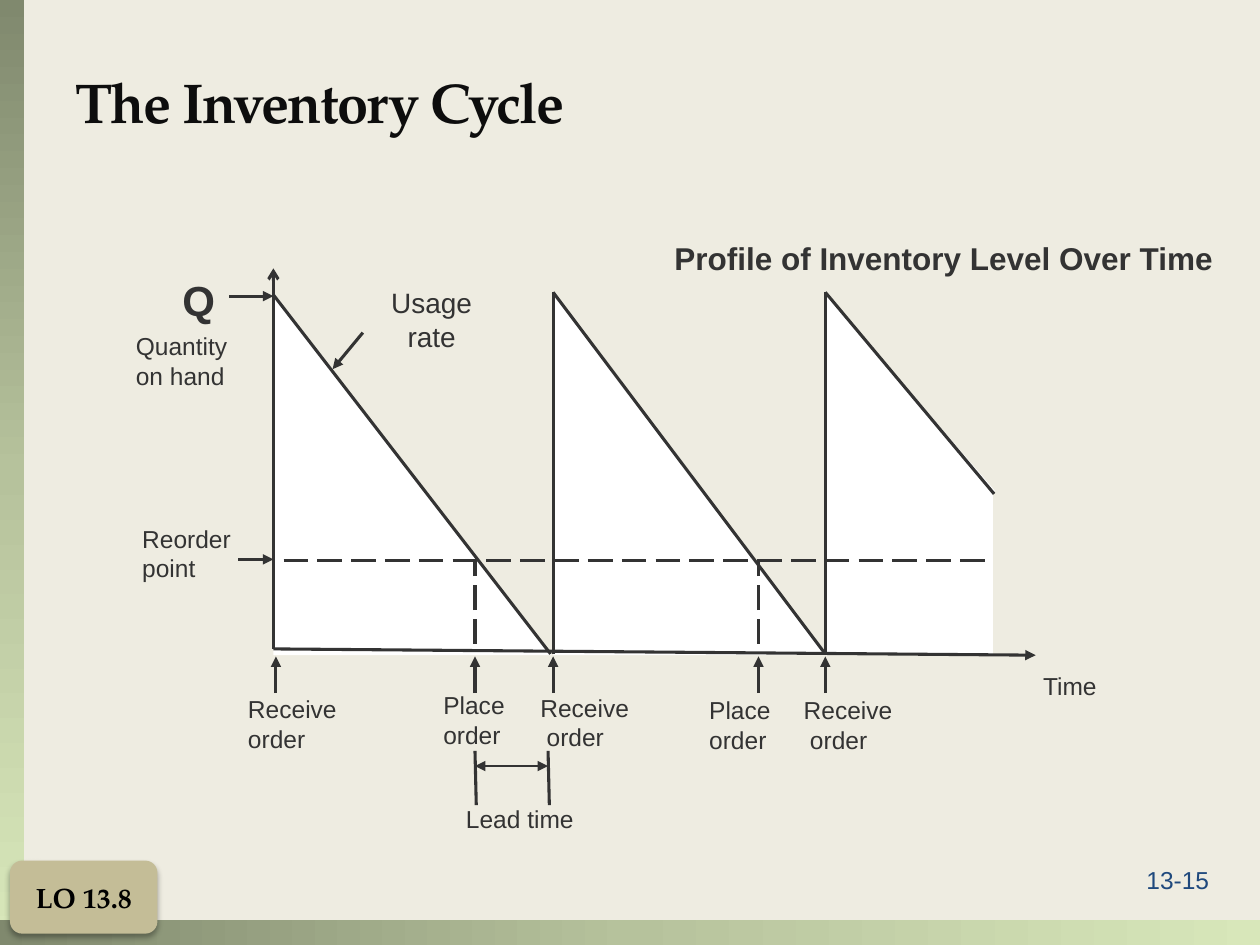
from copy import deepcopy
from dataclasses import dataclass

from lxml import etree
from pptx import Presentation
from pptx.dml.color import RGBColor
from pptx.enum.dml import MSO_LINE
from pptx.enum.shapes import MSO_CONNECTOR, MSO_SHAPE
from pptx.enum.text import MSO_ANCHOR, PP_ALIGN
from pptx.oxml.ns import qn
from pptx.slide import Slide
from pptx.util import Inches, Pt

RECTANGLE = MSO_SHAPE.RECTANGLE
ROUNDED = MSO_SHAPE.ROUNDED_RECTANGLE
TRIANGLE = MSO_SHAPE.RIGHT_TRIANGLE
STRAIGHT = MSO_CONNECTOR.STRAIGHT
LONG_DASH = MSO_LINE.LONG_DASH
LEFT, CENTER = PP_ALIGN.LEFT, PP_ALIGN.CENTER
TOP, MIDDLE, BOTTOM = MSO_ANCHOR.TOP, MSO_ANCHOR.MIDDLE, MSO_ANCHOR.BOTTOM

CREAM = RGBColor(0xEE, 0xEC, 0xE1)
WHITE = RGBColor(0xFF, 0xFF, 0xFF)
BLACK = RGBColor(0x00, 0x00, 0x00)
INK = RGBColor(0x33, 0x33, 0x33)
TITLE_INK = RGBColor(0x0D, 0x0D, 0x0D)
NAVY = RGBColor(0x1F, 0x49, 0x7D)
TAN = RGBColor(0xC4, 0xBD, 0x97)
MOSS = RGBColor(0x80, 0x89, 0x6E)
SAGE = RGBColor(0xB6, 0xC2, 0x9C)
LIME = RGBColor(0xD8, 0xE7, 0xBA)
SANS, SERIF = "Arial", "TeX Gyre Pagella"


@dataclass
class InventorySlide:
    """Draws styled elements on the current slide."""

    slide: Slide
    color: RGBColor = INK
    font: str = SANS
    size: float = 14
    weight: float = 1.75

    def block(self, kind, left, top, width, height, color=WHITE):
        shape = self.slide.shapes.add_shape(
            kind, Inches(left), Inches(top), Inches(width), Inches(height))
        shape.shadow.inherit = False
        shape.fill.solid()
        shape.fill.fore_color.rgb = color
        shape.line.fill.background()
        return shape

    def gradient_bar(self, left, top, width, height, angle):
        shape = self.block(RECTANGLE, left, top, width, height)
        shape.fill.gradient()
        shape.fill.gradient_angle = angle
        first = shape._element.spPr.find(".//" + qn("a:gs"))
        first.addnext(deepcopy(first))
        colors = (MOSS, SAGE, LIME)
        for index, (stop, color) in enumerate(zip(shape.fill.gradient_stops, colors)):
            stop.position = index / 2
            stop.color.rgb = color

    def badge(self, left, top, width, height, text):
        shape = self.block(ROUNDED, left, top, width, height, TAN)
        effects = shape._element.spPr.find(qn("a:effectLst"))
        shadow = etree.SubElement(
            effects, qn("a:outerShdw"), blurRad=str(Pt(3.5)), dist=str(Pt(2.2)),
            dir="5400000", algn="t", rotWithShape="0")
        black = etree.SubElement(shadow, qn("a:srgbClr"), val=str(BLACK))
        etree.SubElement(black, qn("a:alpha"), val="32000")
        shape.text_frame.vertical_anchor = MIDDLE
        self.add_lines(shape.text_frame, [text], 16, CENTER, True, BLACK, SERIF)

    def add_lines(self, frame, lines, size=None, align=LEFT, bold=False,
                  color=None, font=None, last_indent=0, spacing=0):
        for index, line in enumerate(lines):
            paragraph = frame.paragraphs[0] if index == 0 else frame.add_paragraph()
            paragraph.alignment = align
            if last_indent and index == len(lines) - 1:
                properties = paragraph._p.get_or_add_pPr()
                properties.set("marL", str(Inches(last_indent)))
                properties.set("indent", "0")
            run = paragraph.add_run()
            run.text = line
            run.font.size = Pt(size or self.size)
            run.font.name = font or self.font
            run.font.bold = bold
            run.font.color.rgb = color or self.color
            if spacing:
                run._r.get_or_add_rPr().set("spc", str(spacing))

    def label(self, left, top, width, height, *lines, wrap=False, anchor=TOP, **style):
        box = self.slide.shapes.add_textbox(
            Inches(left), Inches(top), Inches(width), Inches(height))
        box.text_frame.word_wrap = wrap
        box.text_frame.vertical_anchor = anchor
        self.add_lines(box.text_frame, lines, **style)

    def line(self, start, end, head=None, tail=None, dash=None, weight=None):
        connector = self.slide.shapes.add_connector(
            STRAIGHT, *(Inches(value) for value in (*start, *end)))
        connector.line.color.rgb = self.color
        connector.line.width = Pt(weight or self.weight)
        if dash:
            connector.line.dash_style = dash
        outline = connector._element.spPr.find(qn("a:ln"))
        for tag, kind in (("a:headEnd", head), ("a:tailEnd", tail)):
            if kind:
                etree.SubElement(outline, qn(tag), type=kind)
        etree.SubElement(connector._element.spPr, qn("a:effectLst"))

    def arrow(self, start, end, **style):
        self.line(start, end, tail="triangle", **style)


def main():
    presentation = Presentation()
    presentation.slide_width, presentation.slide_height = Inches(10), Inches(7.5)
    slide = presentation.slides.add_slide(presentation.slide_layouts[6])
    slide.background.fill.solid()
    slide.background.fill.fore_color.rgb = CREAM
    page = InventorySlide(slide)

    page.gradient_bar(0, 0, 0.19, 7.47, 270)
    page.gradient_bar(0, 7.3, 10, 0.2, 0)
    page.label(9, 6.82, 0.82, 0.34, "13-15", wrap=True, color=NAVY)
    page.label(0.5, 0.36, 9, 0.76, "The Inventory Cycle", wrap=True, anchor=BOTTOM,
               size=32, bold=True, color=TITLE_INK, font=SERIF, spacing=-100)

    axis, second, third, chart_end = 2.17, 4.39, 6.55, 7.89
    peak, base, reorder = 2.32, 5.19, 4.45
    first_order, second_order = 3.77, 6.02

    page.block(RECTANGLE, third, 3.88, 1.33, 1.32)
    page.block(TRIANGLE, third, 2.33, 1.35, 1.57)
    page.block(TRIANGLE, axis, 2.35, 2.21, 2.85)
    page.block(TRIANGLE, second, peak, 2.17, 2.88)

    page.label(5.23, 1.85, 4.52, 0.4, "Profile of Inventory Level Over Time",
               size=18, bold=True, align=CENTER)
    page.label(1.35, 2.13, 0.46, 0.5, "Q", size=24, bold=True)
    page.label(0.98, 2.58, 1.16, 0.57, "Quantity", "on hand", wrap=True)
    page.label(1.03, 4.11, 1.21, 0.57, "Reorder", "point", wrap=True)
    page.label(2.83, 2.22, 1.19, 0.64, "Usage", "rate", wrap=True, size=16, align=CENTER)
    page.label(8.18, 5.28, 0.63, 0.33, "Time")
    page.label(3.6, 6.33, 1.06, 0.33, "Lead time")
    page.label(1.87, 5.46, 0.96, 0.57, "Receive", "order")
    for place_left, place_top, receive_left, receive_top in (
            (3.42, 5.43, 4.19, 5.45), (5.53, 5.47, 6.28, 5.47)):
        page.label(place_left, place_top, 0.69, 0.57, "Place", "order")
        page.label(receive_left, receive_top, 0.91, 0.57, "Receive", "order",
                   last_indent=0.05)

    page.arrow((1.82, 2.35), (axis, 2.35))
    page.arrow((1.89, 4.44), (axis, 4.44))
    page.arrow((2.88, 2.64), (2.64, 2.93))
    for event in (2.19, first_order, second, second_order, third):
        page.arrow((event, 5.5), (event, 5.21))

    page.line((2.25, reorder), (7.88, reorder), dash=LONG_DASH)
    for order in (first_order, second_order):
        page.line((order, 5.11), (order, reorder), dash=LONG_DASH)

    page.arrow((axis, 5.15), (8.22, 5.2))
    page.line((axis, 5.15), (axis, 2.13), tail="arrow")
    page.line((axis, 2.34), (second - 0.02, base))
    page.line((second, peak), (third, base))
    page.line((third, peak), (chart_end, 3.92))
    for delivery in (second, third):
        page.line((delivery, peak), (delivery, base))

    lead_end = 4.35
    for bracket in (first_order, lead_end):
        page.line((bracket, 5.96), (bracket + 0.01, 6.39))
    page.arrow((first_order, 6.08), (lead_end, 6.08), head="triangle", weight=1.25)

    page.badge(0.08, 6.83, 1.17, 0.58, "LO 13.8")
    presentation.save("out.pptx")


if __name__ == "__main__":
    main()
